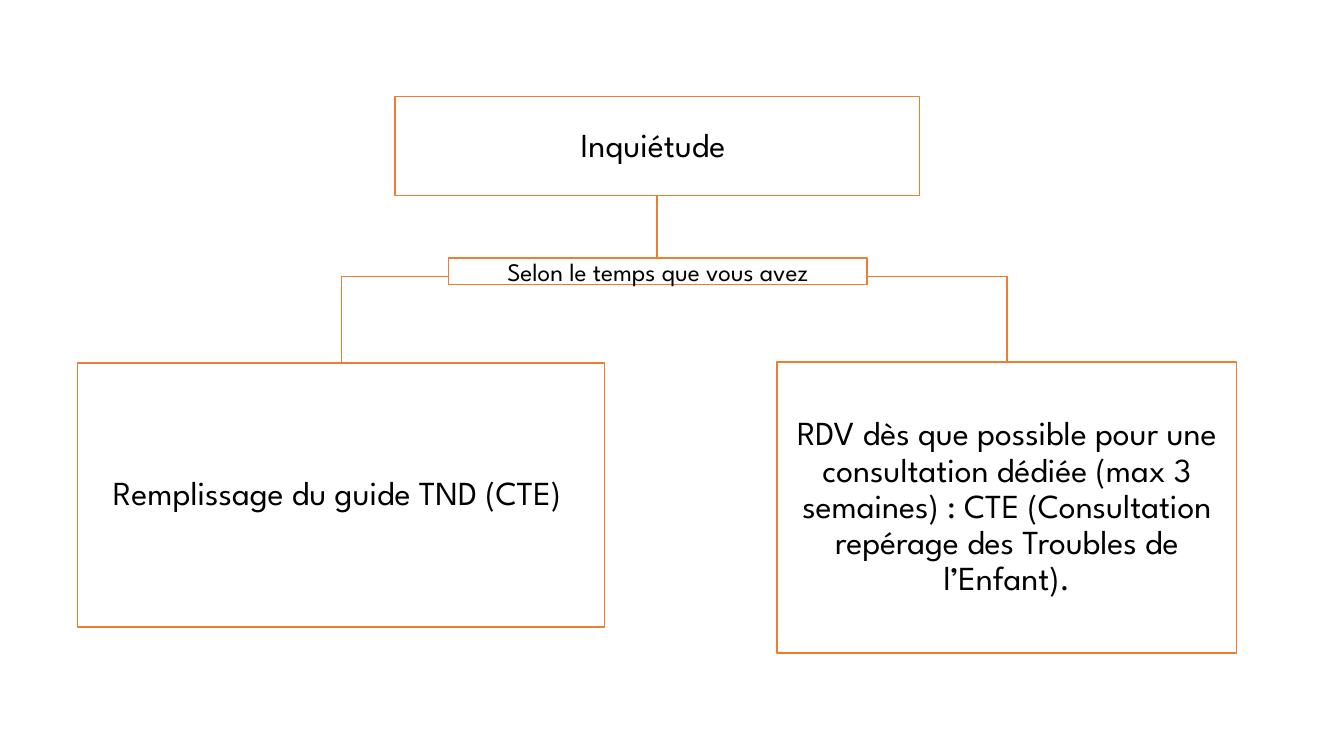
from dataclasses import dataclass

from pptx import Presentation
from pptx.dml.color import RGBColor as RGB
from pptx.enum.shapes import MSO_SHAPE as Shape
from pptx.enum.text import MSO_ANCHOR as Anchor, PP_ALIGN as Align
from pptx.util import Inches, Pt

WIDE, HIGH = Inches(13.33), Inches(7.5)


@dataclass(frozen=True)
class Theme:
    font: str = "League Spartan"
    ink: RGB = RGB(0, 0, 0)
    paper: RGB = RGB(255, 255, 255)
    edge: RGB = RGB(0xED, 0x7D, 0x31)
    rule: Pt = Pt(1)
    body: Pt = Pt(24)
    small: Pt = Pt(18)


THEME = Theme()


# Lengths are percentages of the slide's width and height
def col(share):
    return round(WIDE * share / 100)


def row(share):
    return round(HIGH * share / 100)


def edge(shape):
    shape.shadow.inherit = False
    shape.line.color.rgb = THEME.edge
    shape.line.width = THEME.rule


def box(slide, area, text, size=THEME.body, pad=0.02, lead=0.9):
    x, y, w, h = area
    shape = slide.shapes.add_shape(Shape.RECTANGLE, col(x), row(y), col(w), row(h))
    edge(shape)
    shape.fill.solid()
    shape.fill.fore_color.rgb = THEME.paper
    frame = shape.text_frame
    frame.word_wrap = True
    frame.vertical_anchor = Anchor.MIDDLE
    frame.margin_left = frame.margin_right = Inches(pad)
    frame.margin_top = frame.margin_bottom = Inches(0.02)
    para = frame.paragraphs[0]
    para.text = text
    para.alignment = Align.CENTER
    para.line_spacing = lead
    para.font.name = THEME.font
    para.font.size = size
    para.font.color.rgb = THEME.ink


def branch(slide, root, leaf, bend):
    """Elbow line from the foot of root to the top of leaf."""
    start, end = (area[0] + area[2] / 2 for area in (root, leaf))
    foot = root[1] + root[3]
    pen = slide.shapes.build_freeform(col(start), row(foot))
    turns = [(start, bend), (end, bend), (end, leaf[1])]
    pen.add_line_segments([(col(x), row(y)) for x, y in turns], close=False)
    line = pen.convert_to_shape()
    line.fill.background()
    edge(line)


def main():
    deck = Presentation()
    deck.slide_width, deck.slide_height = WIDE, HIGH
    slide = deck.slides.add_slide(deck.slide_layouts[6])

    # Places of the boxes: left, top, width, height
    root = (29.4, 12.8, 39, 13.07)
    label = (33.38, 34.13, 31.12, 3.47)
    guide = (5.78, 48, 39.22, 34.93)
    visit = (57.82, 47.87, 34.2, 38.53)

    # Branches, behind the boxes
    for leaf in (visit, guide):
        branch(slide, root, leaf, bend=36.6)

    # Tree
    box(slide, root, "Inquiétude ")
    box(slide, guide, "Remplissage du guide TND (CTE) ")
    box(slide, visit, "RDV dès que possible pour une consultation dédiée "
        "(max 3 semaines) : CTE (Consultation repérage des Troubles de l’Enfant).")

    # Condition on the fork
    box(slide, label, "Selon le temps que vous avez", THEME.small, pad=0.1, lead=1.0)

    deck.save("out.pptx")


if __name__ == "__main__":
    main()
